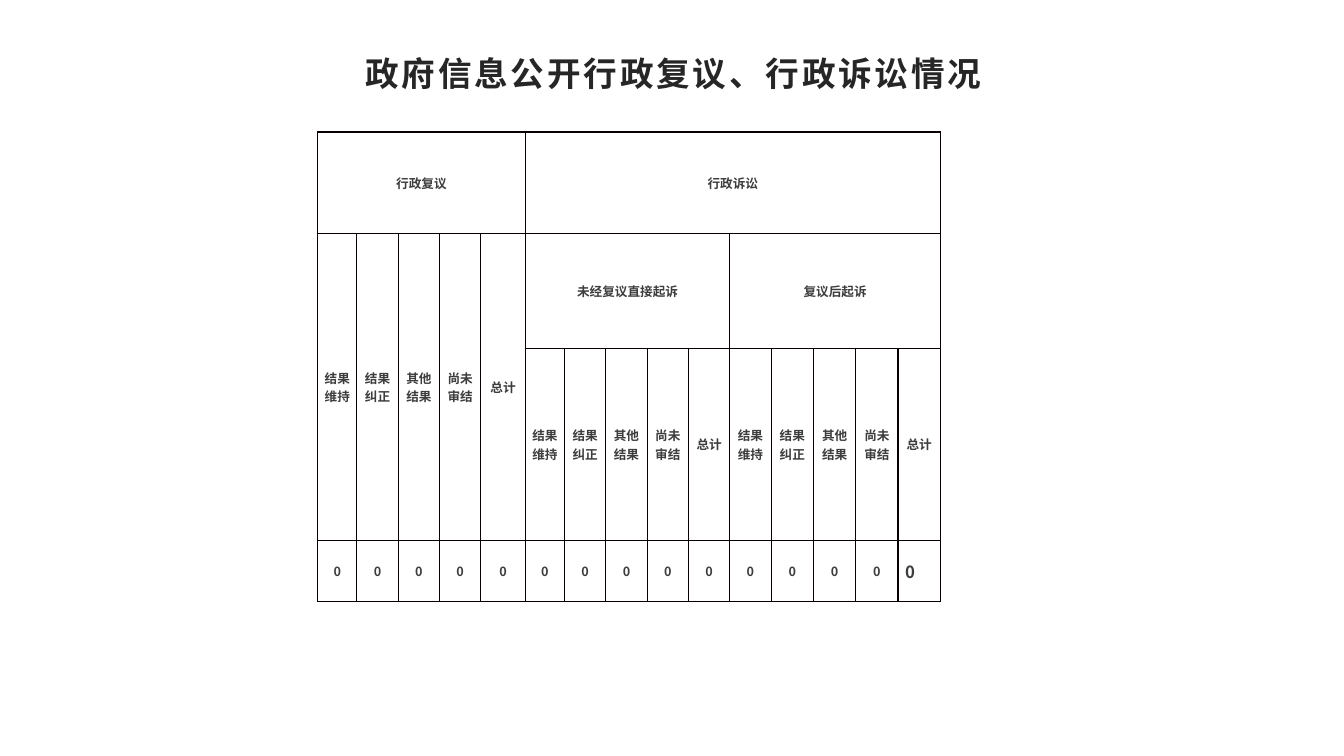
from lxml import etree
from pptx import Presentation
from pptx.dml.color import RGBColor
from pptx.enum import text
from pptx.oxml import ns
from pptx.util import Inches, Pt

TITLE_INK = RGBColor(0x26, 0x26, 0x26)
CELL_INK = RGBColor(0x3D, 0x3D, 0x3D)
BORDER = RGBColor(0x08, 0x00, 0x00)
WHITE = RGBColor(0xFF, 0xFF, 0xFF)
CJK_FONT = "Noto Sans CJK SC"
COL_WIDTHS = [0.39, 0.41, 0.41, 0.41, 0.44, 0.39] + [0.41] * 5 + [0.42] * 4
ROW_HEIGHTS = [1.01, 1.14, 1.9, 0.61]
OUTCOMES = ["结果维持", "结果纠正", "其他结果", "尚未审结", "总计"]
GROUPS = [
    (0, 0, 5, "行政复议"),
    (0, 5, 10, "行政诉讼"),
    (1, 5, 5, "未经复议直接起诉"),
    (1, 10, 5, "复议后起诉"),
]


def style_paragraph(p, size, color, font, align):
    """Set a bold font, its East Asian face and the alignment."""
    p.alignment = align
    p.font.size, p.font.bold, p.font.name = Pt(size), True, font
    p.font.color.rgb = color
    props = p._p.pPr.find(ns.qn("a:defRPr"))
    props.find(ns.qn("a:latin")).addnext(
        etree.Element(ns.qn("a:ea"), typeface=CJK_FONT))
    return props


def add_title(slide, title):
    """Add the centred slide title with wide letter spacing."""
    sp = slide.shapes.add_textbox(Inches(0.73), Inches(0.48), Inches(11.87), Inches(0.48))
    tf = sp.text_frame
    tf.word_wrap = True
    tf.vertical_anchor = text.MSO_ANCHOR.MIDDLE
    tf.margin_left, tf.margin_right = Inches(0.11), Inches(0.08)
    tf.margin_top = tf.margin_bottom = Inches(0.04)
    p = tf.paragraphs[0]
    p.text = title
    props = style_paragraph(p, 24, TITLE_INK, "Arial", text.PP_ALIGN.CENTER)
    props.set("spc", "200")


def style_cell(cell):
    """Give a cell thin borders, a white fill and its margins."""
    props = cell._tc.get_or_add_tcPr()
    for side in ("lnL", "lnR", "lnT", "lnB"):
        line = etree.SubElement(props, ns.qn(f"a:{side}"), w=str(Pt(1)))
        fill = etree.SubElement(line, ns.qn("a:solidFill"))
        etree.SubElement(fill, ns.qn("a:srgbClr"), val=str(BORDER))
    cell.fill.solid()
    cell.fill.fore_color.rgb = WHITE
    cell.margin_left = cell.margin_right = Inches(0.07)
    cell.margin_top = cell.margin_bottom = 0
    cell.vertical_anchor = text.MSO_ANCHOR.MIDDLE


def write_cell(cell, words, size=9, align=text.PP_ALIGN.CENTER):
    """Write one styled line of text into a cell."""
    p = cell.text_frame.paragraphs[0]
    p.text = words
    style_paragraph(p, size, CELL_INK, CJK_FONT, align)


def add_case_table(slide):
    """Add the table of review and litigation outcomes."""
    table = slide.shapes.add_table(
        len(ROW_HEIGHTS), len(COL_WIDTHS), Inches(3.15), Inches(1.31),
        Inches(sum(COL_WIDTHS)), Inches(sum(ROW_HEIGHTS))).table
    table.first_row = table.horz_banding = False
    for column, width in zip(table.columns, COL_WIDTHS):
        column.width = Inches(width)
    for row, height in zip(table.rows, ROW_HEIGHTS):
        row.height = Inches(height)
    for cell in table.iter_cells():
        style_cell(cell)
    for row, col, span, label in GROUPS:
        table.cell(row, col).merge(table.cell(row, col + span - 1))
        write_cell(table.cell(row, col), label)
    last = len(COL_WIDTHS) - 1
    for col in range(last + 1):
        row = 1 if col < len(OUTCOMES) else 2
        if row == 1:
            table.cell(1, col).merge(table.cell(2, col))
        write_cell(table.cell(row, col), OUTCOMES[col % len(OUTCOMES)])
        if col < last:
            write_cell(table.cell(3, col), "0")
    write_cell(table.cell(3, last), "0", 12, text.PP_ALIGN.LEFT)


def main():
    """Build and save the slide."""
    prs = Presentation()
    prs.slide_width, prs.slide_height = Inches(13.33), Inches(7.5)
    slide = prs.slides.add_slide(prs.slide_layouts[6])
    add_title(slide, "政府信息公开行政复议、行政诉讼情况")
    add_case_table(slide)
    prs.save("out.pptx")


if __name__ == "__main__":
    main()
